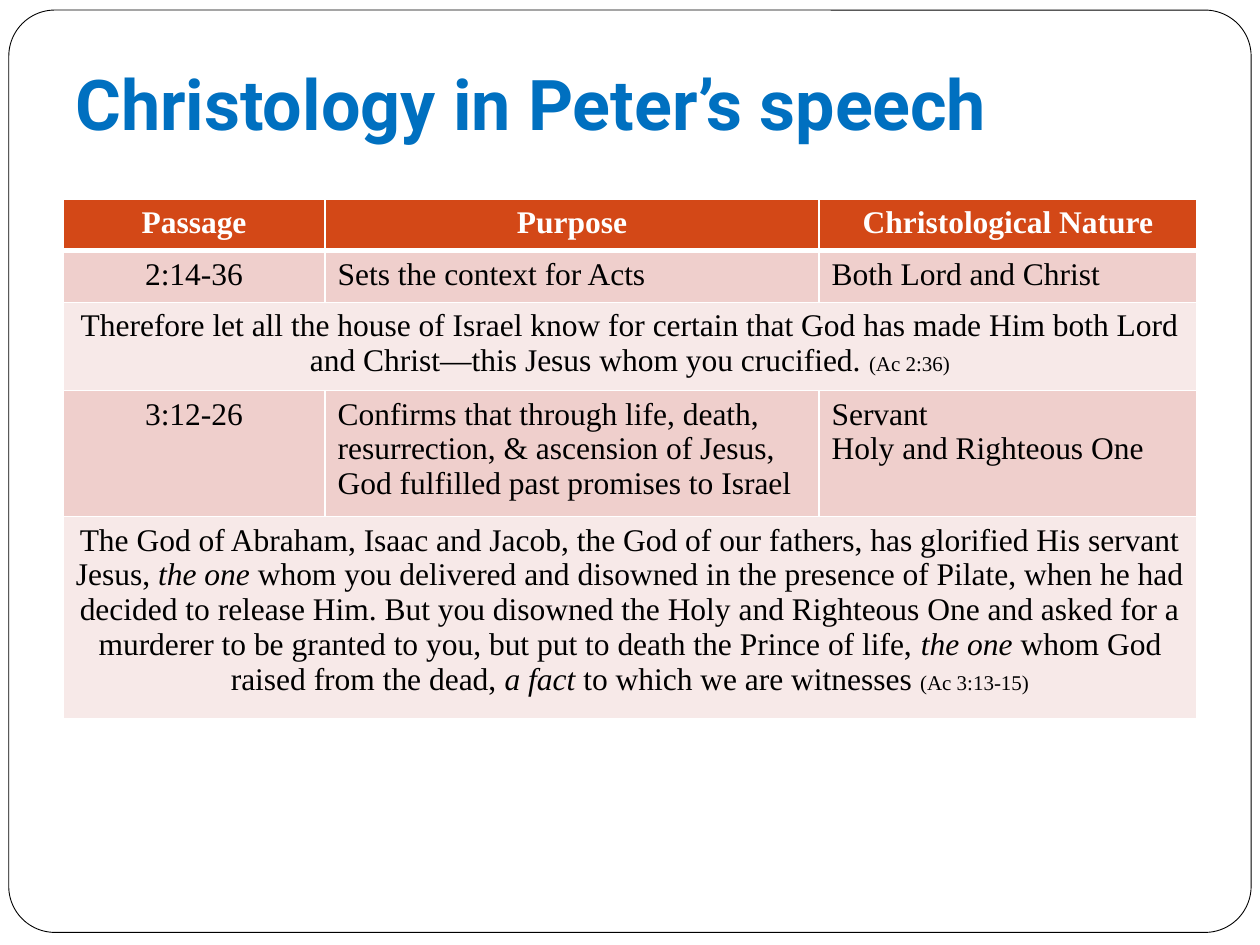
from dataclasses import dataclass

from lxml.etree import SubElement
from pptx import Presentation
from pptx.dml.color import RGBColor
from pptx.enum.shapes import MSO_SHAPE as Shape
from pptx.enum.text import MSO_ANCHOR as Anchor, PP_ALIGN as Align
from pptx.oxml.ns import qn
from pptx.util import Inches, Pt


@dataclass(frozen=True)
class Theme:
    title_font: str = "Roboto"
    body_font: str = "Times New Roman"
    title_size: int = 40
    body_size: int = 18
    citation_size: int = 12
    title: str = "0070C0"
    header: str = "D34817"
    passage: str = "EFCFCC"
    quote: str = "F7E9E8"
    white: str = "FFFFFF"
    black: str = "000000"


@dataclass(frozen=True)
class Phrase:
    text: str
    italic: bool = False
    size: int = Theme.body_size


@dataclass(frozen=True)
class Row:
    cells: tuple
    fill: str
    centered: int  # number of leading cells that are centred
    header: bool = False


THEME = Theme()
COLUMN_WIDTHS = (2.08, 3.92, 3)
ROW_HEIGHT = 0.41


def citation(text: str) -> Phrase:
    return Phrase(text, size=THEME.citation_size)


# A cell is a list of paragraphs, and a paragraph is a list of phrases.
def plain(*lines: str) -> list:
    return [[Phrase(line)] for line in lines]


ROWS = (
    Row((plain("Passage"), plain("Purpose"), plain("Christological Nature")),
        THEME.header, centered=3, header=True),
    Row((plain("2:14-36"), plain("Sets the context for Acts"), plain("Both Lord and Christ")),
        THEME.passage, centered=1),
    Row(([[
        Phrase("Therefore let all the house of Israel know for certain that God has made Him "
               "both Lord and Christ—this Jesus whom you crucified. "),
        citation("(Ac 2:36)"),
    ]],), THEME.quote, centered=1),
    Row((plain("3:12-26"),
         plain("Confirms that through life, death, resurrection, & ascension of Jesus, "
               "God fulfilled past promises to Israel"),
         plain("Servant", "Holy and Righteous One")),
        THEME.passage, centered=1),
    Row(([[
        Phrase("The God of Abraham, Isaac and Jacob, the God of our fathers, has glorified "
               "His servant Jesus, "),
        Phrase("the one ", italic=True),
        Phrase("whom you delivered and disowned in the presence of Pilate, when he had decided "
               "to release Him. But you disowned the Holy and Righteous One and asked for a "
               "murderer to be granted to you, but put to death the Prince of life, "),
        Phrase("the one ", italic=True),
        Phrase("whom God raised from the dead, "),
        Phrase("a fact ", italic=True),
        Phrase("to which we are witnesses "),
        citation("(Ac 3:13-15)"),
    ]],), THEME.quote, centered=1),
)


def add_text(paragraph, text: str, *, font: str = THEME.body_font, size: int = THEME.body_size,
             color: str = THEME.black, bold: bool = False, italic: bool = False) -> None:
    run = paragraph.add_run()
    run.text = text
    run.font.name = font
    run.font.size = Pt(size)
    run.font.bold = bold
    run.font.italic = italic
    run.font.color.rgb = RGBColor.from_string(color)


def set_borders(cell, bottom_width: int) -> None:
    """Draw white borders; they must precede the fill in the cell properties."""
    properties = cell._tc.get_or_add_tcPr()
    for side in ("L", "R", "T", "B"):
        width = bottom_width if side == "B" else 1
        border = SubElement(properties, qn(f"a:ln{side}"), w=str(Pt(width)))
        fill = SubElement(border, qn("a:solidFill"))
        SubElement(fill, qn("a:srgbClr"), val=THEME.white)


def fill_cell(cell, paragraphs: list, row: Row, centered: bool) -> None:
    for index, phrases in enumerate(paragraphs):
        frame = cell.text_frame
        paragraph = frame.add_paragraph() if index else frame.paragraphs[0]
        paragraph.alignment = Align.CENTER if centered else Align.LEFT
        for phrase in phrases:
            add_text(paragraph, phrase.text, size=phrase.size, italic=phrase.italic,
                     bold=row.header, color=THEME.white if row.header else THEME.black)


def add_frame(slide) -> None:
    frame = slide.shapes.add_shape(Shape.ROUNDED_RECTANGLE, Inches(0.07), Inches(0.08),
                                   Inches(9.86), Inches(7.32))
    frame.adjustments[0] = 0.05
    frame.shadow.inherit = False
    frame.fill.solid()
    frame.fill.fore_color.rgb = RGBColor.from_string(THEME.white)
    frame.line.color.rgb = RGBColor.from_string(THEME.black)
    frame.line.width = Pt(0.5)


def add_title(slide, text: str) -> None:
    title = slide.shapes.add_textbox(Inches(0.5), Inches(0.3), Inches(9), Inches(0.95)).text_frame
    title.word_wrap = True
    title.vertical_anchor = Anchor.BOTTOM
    title.margin_bottom = Inches(0.1)
    add_text(title.paragraphs[0], text, font=THEME.title_font, size=THEME.title_size,
             color=THEME.title, bold=True)


def add_passages(slide) -> None:
    table = slide.shapes.add_table(len(ROWS), len(COLUMN_WIDTHS), Inches(0.5), Inches(1.58),
                                   Inches(sum(COLUMN_WIDTHS)),
                                   Inches(ROW_HEIGHT * len(ROWS))).table
    for column, width in zip(table.columns, COLUMN_WIDTHS):
        column.width = Inches(width)
    for y, row in enumerate(ROWS):
        for x in range(len(COLUMN_WIDTHS)):
            cell = table.cell(y, x)
            set_borders(cell, bottom_width=3 if row.header else 1)
            cell.fill.solid()
            cell.fill.fore_color.rgb = RGBColor.from_string(row.fill)
        if len(row.cells) == 1:
            table.cell(y, 0).merge(table.cell(y, len(COLUMN_WIDTHS) - 1))
        for x, paragraphs in enumerate(row.cells):
            fill_cell(table.cell(y, x), paragraphs, row, centered=x < row.centered)


def main() -> None:
    deck = Presentation()
    deck.slide_width, deck.slide_height = Inches(10), Inches(7.5)
    slide = deck.slides.add_slide(deck.slide_layouts[6])
    add_frame(slide)
    add_title(slide, "Christology in Peter’s speech")
    add_passages(slide)
    deck.save("out.pptx")


if __name__ == "__main__":
    main()
